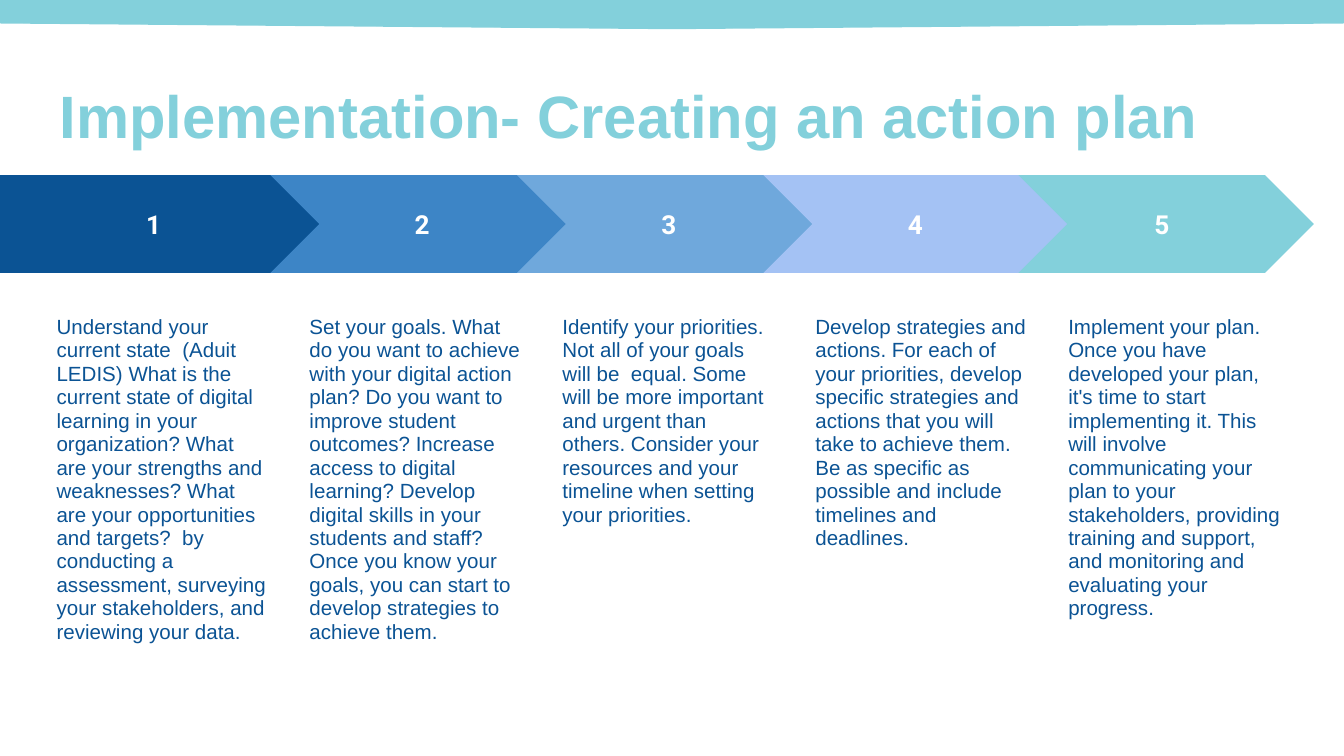
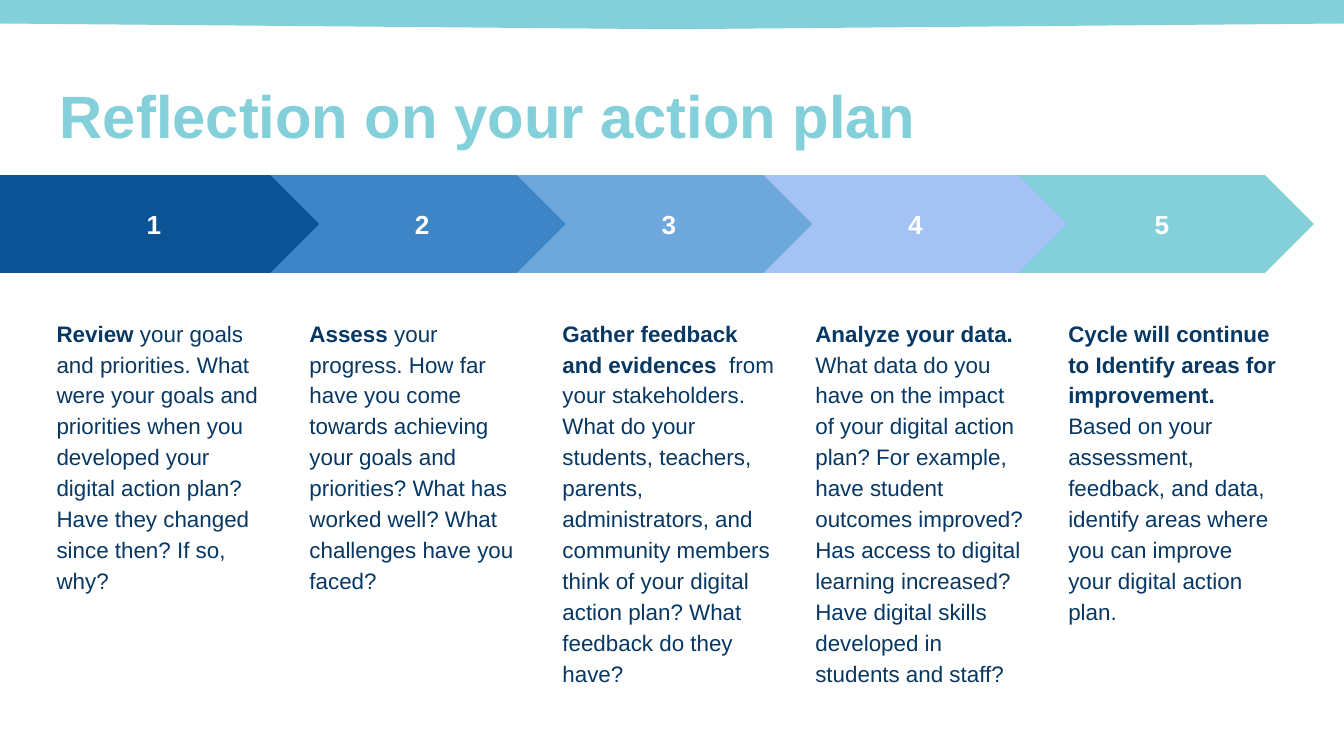
from pptx import Presentation
from pptx.dml.color import RGBColor
from pptx.enum.shapes import MSO_SHAPE
from pptx.enum.text import MSO_ANCHOR, MSO_AUTO_SIZE, PP_ALIGN
from pptx.util import Cm, Pt

TEAL = RGBColor(0x83, 0xD0, 0xDB)
BLUE = RGBColor(0x0B, 0x53, 0x94)
NAVY = RGBColor(0x07, 0x37, 0x63)
WHITE = RGBColor(0xFF, 0xFF, 0xFF)
STEP_COLORS = [BLUE, RGBColor(0x3D, 0x85, 0xC6), RGBColor(0x6F, 0xA8, 0xDC),
               RGBColor(0xA4, 0xC2, 0xF4), TEAL]
DRAW_ORDER = [0, 1, 2, 4, 3]  # the fourth arrow overlaps the fifth
INSET = Cm(0.25)

# Each step is a bold lead and the text that follows it.
SLIDES = [
    dict(
        title="Implementation- Creating an action plan",
        number_font="Roboto", size=11, color=BLUE, spacing=0.95,
        steps=[
            ("", "Understand your current state  (Aduit LEDIS) What is the current "
                 "state of digital learning in your organization? What are your "
                 "strengths and weaknesses? What are your opportunities and targets?  "
                 "by conducting a assessment, surveying your stakeholders, and "
                 "reviewing your data."),
            ("", "Set your goals. What do you want to achieve with your digital action "
                 "plan? Do you want to improve student outcomes? Increase access to "
                 "digital learning? Develop digital skills in your students and staff? "
                 "Once you know your goals, you can start to develop strategies to "
                 "achieve them."),
            ("", "Identify your priorities. Not all of your goals will be  equal. Some "
                 "will be more important and urgent than others. Consider your "
                 "resources and your timeline when setting your priorities."),
            ("", "Develop strategies and actions. For each of your priorities, develop "
                 "specific strategies and actions that you will take to achieve them. "
                 "Be as specific as possible and include timelines and deadlines."),
            ("", "Implement your plan. Once you have developed your plan, it's time to "
                 "start implementing it. This will involve communicating your plan to "
                 "your stakeholders, providing training and support, and monitoring "
                 "and evaluating your progress."),
        ],
    ),
    dict(
        title="Reflection on your action plan",
        number_font="Arial", size=12, color=NAVY, spacing=1.15,
        steps=[
            ("Review", " your goals and priorities. What were your goals and priorities "
                       "when you developed your digital action plan? Have they changed "
                       "since then? If so, why?"),
            ("Assess ", "your progress. How far have you come towards achieving your "
                        "goals and priorities? What has worked well? What challenges "
                        "have you faced?"),
            ("Gather feedback and evidences",
             "  from your stakeholders. What do your students, teachers, parents, "
             "administrators, and community members think of your digital action plan? "
             "What feedback do they have?"),
            ("Analyze your data. ",
             "What data do you have on the impact of your digital action plan? For "
             "example, have student outcomes improved? Has access to digital learning "
             "increased? Have digital skills developed in students and staff?"),
            ("Cycle will continue to Identify areas for improvement.",
             " Based on your assessment, feedback, and data, identify areas where you "
             "can improve your digital action plan."),
        ],
    ),
]


def add_filled(s, kind, left, top, width, height, color):
    sp = s.shapes.add_shape(kind, left, top, width, height)
    sp.shadow.inherit = False
    sp.fill.solid()
    sp.fill.fore_color.rgb = color
    sp.line.fill.background()
    return sp


def set_frame(tf, anchor):
    tf.word_wrap = True
    tf.auto_size = MSO_AUTO_SIZE.NONE
    tf.vertical_anchor = anchor
    tf.margin_left = tf.margin_right = tf.margin_top = tf.margin_bottom = INSET


prs = Presentation()
prs.slide_width, prs.slide_height = Cm(25.4), Cm(14.29)

for content in SLIDES:
    s = prs.slides.add_slide(prs.slide_layouts[5])

    title = s.shapes.title
    title.left, title.top, title.width, title.height = Cm(0.88), Cm(1.24), Cm(23.67), Cm(1.6)
    tf = title.text_frame
    set_frame(tf, MSO_ANCHOR.TOP)
    tf.text = content["title"]
    p = tf.paragraphs[0]
    p.alignment = PP_ALIGN.LEFT
    p.font.name, p.font.size, p.font.bold = "Arial", Pt(32), True
    p.font.color.rgb = TEAL

    for i in DRAW_ORDER:
        if i == 0:
            kind, left, width, number = MSO_SHAPE.PENTAGON, Cm(0), Cm(6.15), " 1"
        else:
            kind, left, width = MSO_SHAPE.CHEVRON, Cm(5.11 + 4.66 * (i - 1)), Cm(5.74)
            number = str(i + 1)
        arrow = add_filled(s, kind, left, Cm(3.31), width, Cm(1.85), STEP_COLORS[i])
        set_frame(arrow.text_frame, MSO_ANCHOR.MIDDLE)
        p = arrow.text_frame.paragraphs[0]
        p.text = number
        p.alignment = PP_ALIGN.CENTER
        p.font.name, p.font.size, p.font.bold = content["number_font"], Pt(14), True
        p.font.color.rgb = WHITE

        box = s.shapes.add_textbox(Cm(0.82 + 4.78 * i), Cm(5.72), Cm(4.52), Cm(6.53))
        set_frame(box.text_frame, MSO_ANCHOR.TOP)
        p = box.text_frame.paragraphs[0]
        p.line_spacing = content["spacing"]
        p.space_before, p.space_after = Pt(3), Pt(11)
        p.font.name, p.font.size = "Arial", Pt(content["size"])
        p.font.color.rgb = content["color"]
        lead, body = content["steps"][i]
        if lead:
            r = p.add_run()
            r.text = lead
            r.font.bold = True
        p.add_run().text = body

    band = add_filled(s, MSO_SHAPE.FLOWCHART_OFFPAGE_CONNECTOR,
                      Cm(0), Cm(0), prs.slide_width, Cm(0.54), TEAL)
    band.line.color.rgb = TEAL
    band.line.width = Pt(0.75)

prs.save("out.pptx")
